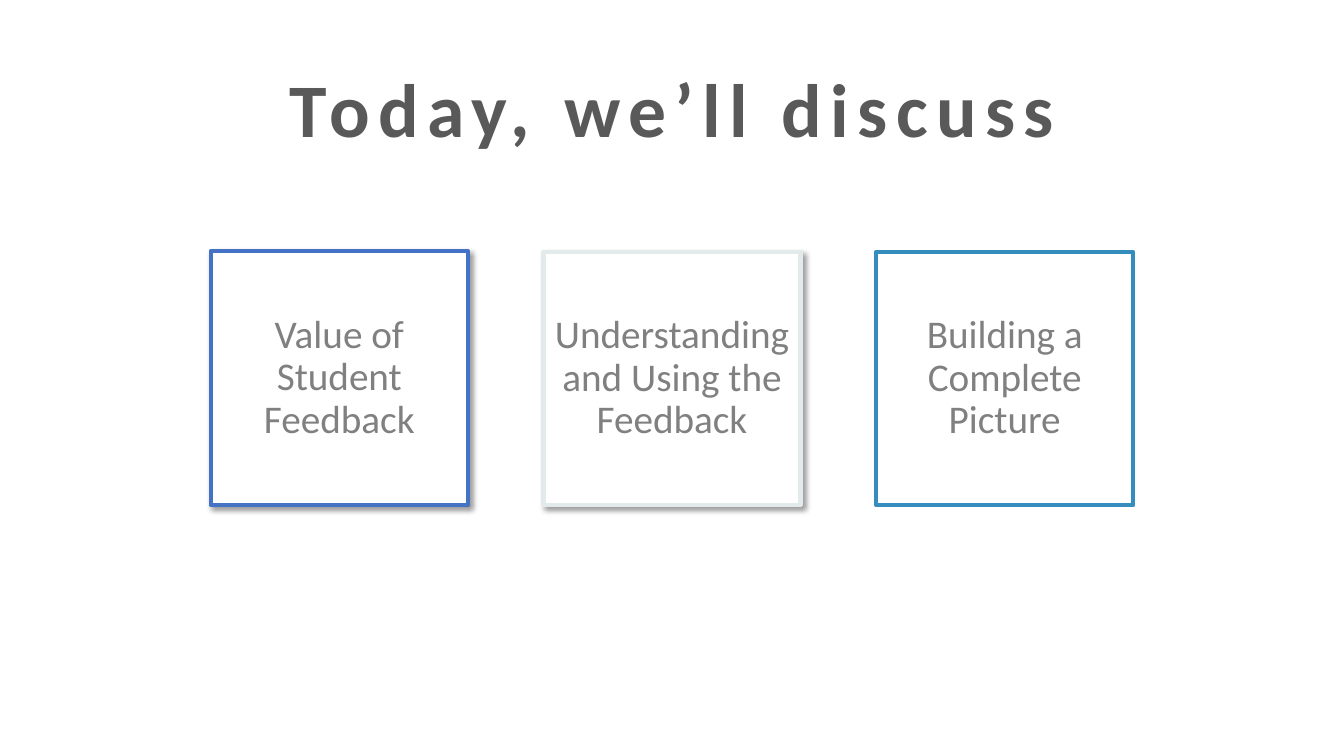
"""Build the agenda slide with a title and three framed topics."""
from lxml import etree
from pptx import Presentation
from pptx.dml.color import RGBColor
from pptx.enum.shapes import MSO_SHAPE
from pptx.enum.text import MSO_ANCHOR, PP_ALIGN
from pptx.oxml.ns import qn
from pptx.util import Pt

RECT = MSO_SHAPE.RECTANGLE
MIDDLE = MSO_ANCHOR.MIDDLE
CENTER = PP_ALIGN.CENTER
PX = 9144
COLORS = {
    "white": "FFFFFF",
    "title": "595959",
    "text": "808080",
    "blue": "4472C4",
    "pale": "E2EAEC",
    "teal": "348DBD",
    "shade": "000000",
}


def write(shape, text, size, color):
    frame = shape.text_frame
    frame.word_wrap = True
    frame.vertical_anchor = MIDDLE
    frame.text = text
    para = frame.paragraphs[0]
    para.alignment = CENTER
    para.line_spacing = 0.9
    font = para.runs[0].font
    font.name = "Calibri"
    font.size = Pt(size)
    font.color.rgb = RGBColor.from_string(COLORS[color])
    return font


def shade(shape):
    effects = shape._element.spPr.find(qn("a:effectLst"))
    outer = etree.SubElement(effects, qn("a:outerShdw"), blurRad=str(Pt(4)),
                             dist=str(Pt(3)), dir="2700000", algn="tl", rotWithShape="0")
    tint = etree.SubElement(outer, qn("a:srgbClr"), val=COLORS["shade"])
    etree.SubElement(tint, qn("a:alpha"), val="40000")


deck = Presentation()
deck.slide_width = 1333 * PX
deck.slide_height = 750 * PX
slide = deck.slides.add_slide(deck.slide_layouts[6])

title = slide.shapes.add_textbox(92 * PX, 40 * PX, 1150 * PX, 145 * PX)
font = write(title, "Today, we’ll discuss", 54, "title")
font.bold = True
font._element.set("spc", "600")

topics = [
    ("Value of Student Feedback", "blue", 249, 252, True),
    ("Understanding and Using the Feedback", "pale", 250, 251, True),
    ("Building a Complete Picture", "teal", 250, 251, False),
]
for i, (text, color, top, height, raised) in enumerate(topics):
    box = slide.shapes.add_shape(RECT, (209 + 330 * i) * PX, top * PX, 255 * PX, height * PX)
    box.fill.solid()
    box.fill.fore_color.rgb = RGBColor.from_string(COLORS["white"])
    box.line.color.rgb = RGBColor.from_string(COLORS[color])
    box.line.width = Pt(3)
    box.shadow.inherit = False
    if raised:
        shade(box)
    write(box, text, 28, "text")

deck.save("out.pptx")
